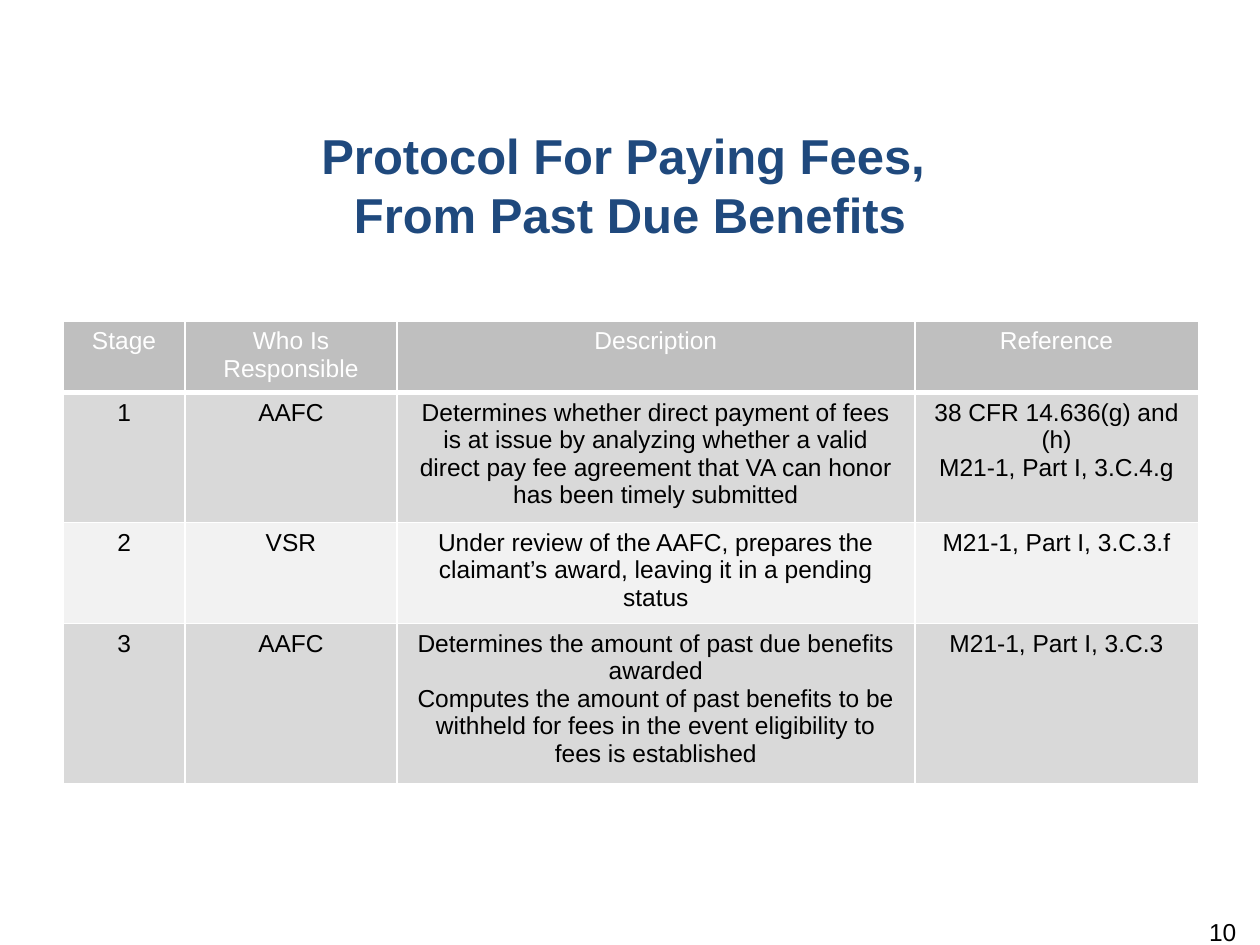
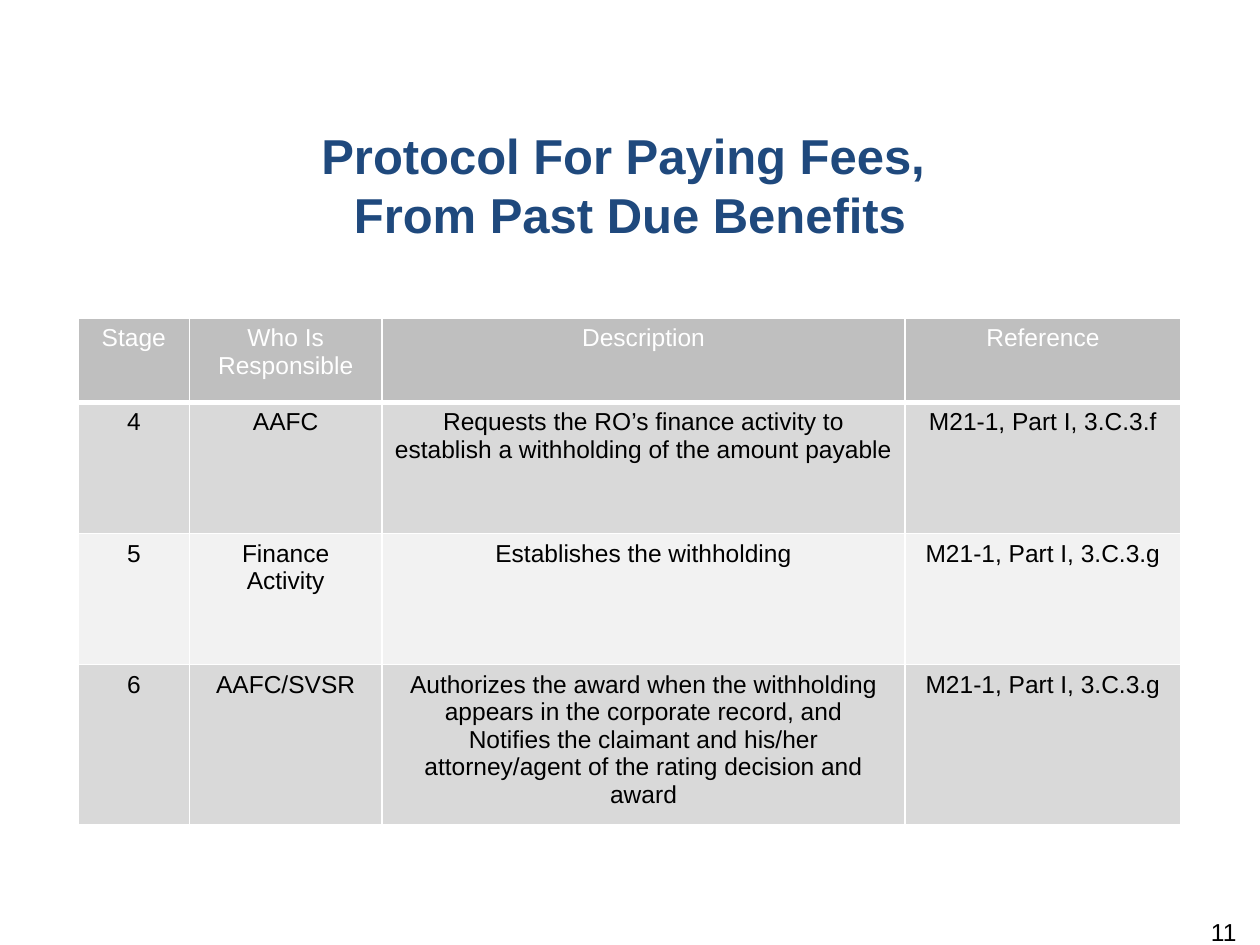
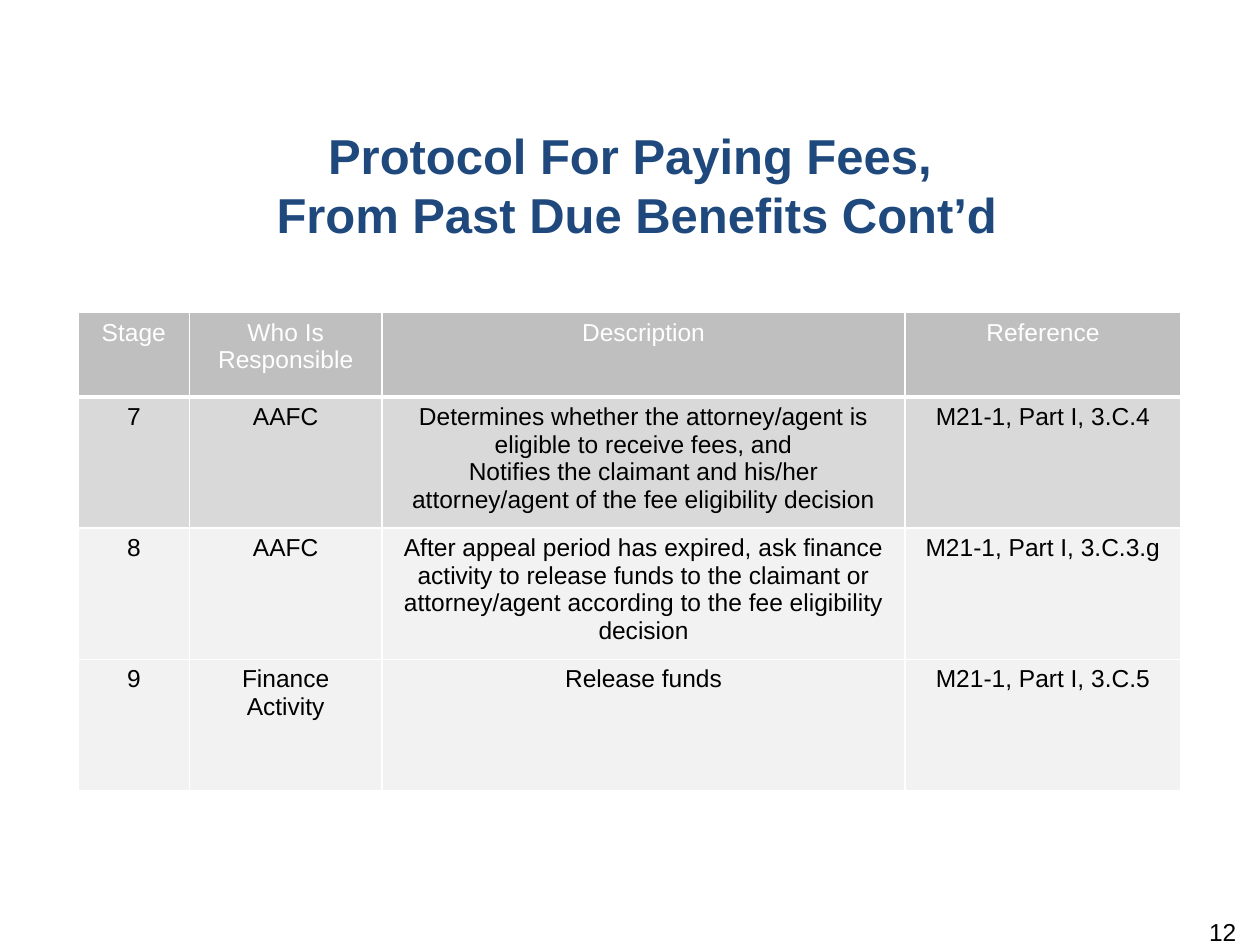
from lxml import etree
from pptx import Presentation
from pptx.dml.color import RGBColor
from pptx.enum.text import MSO_ANCHOR, PP_ALIGN
from pptx.oxml.ns import qn
from pptx.util import Pt

CENTER, RIGHT = PP_ALIGN.CENTER, PP_ALIGN.RIGHT
MIDDLE = MSO_ANCHOR.MIDDLE

FONT = "Arial"
NAVY, BLACK, WHITE = "1F497D", "000000", "FFFFFF"
HEADER_GRAY, DARK_GRAY, LIGHT_GRAY = "BFBFBF", "D9D9D9", "F2F2F2"
TITLE_SIZE, BODY_SIZE = 28, 14
THIN, THICK = 1, 3

TITLE_BOX = (0, 62.6, 720, 85.7)
NUMBER_BOX = (545.8, 519.8, 167.8, 28.8)
TITLE = ["Protocol For Paying Fees, ", "From Past Due Benefits"]
TITLE_CONTINUED = ["Protocol For Paying Fees,", " From Past Due Benefits Cont’d"]
HEADERS = ["Stage", "Who Is Responsible", "Description", "Reference"]

# Each cell is a string; a line feed starts a new paragraph.
WIDE = {"left": 36, "widths": [69.8, 121, 296, 162],
        "heights": [38.9] * 4, "side_margin": 7.9}
NARROW = {"left": 44.8, "widths": [63.4, 110.2, 298.8, 157.7],
          "heights": [48.2, 75, 75, 75], "side_margin": 7.2}

SLIDES = [
    {"number": "10", "title": TITLE, "layout": WIDE, "top": 183.4,
     "fills": [DARK_GRAY, LIGHT_GRAY, DARK_GRAY],
     "rows": [
         ["1", "AAFC",
          "Determines whether direct payment of fees is at issue by analyzing whether "
          "a valid direct pay fee agreement that VA can honor has been timely submitted",
          "38 CFR 14.636(g) and (h)\nM21-1, Part I, 3.C.4.g"],
         ["2", "VSR",
          "Under review of the AAFC, prepares the claimant’s award, "
          "leaving it in a pending status",
          "M21-1, Part I, 3.C.3.f"],
         ["3", "AAFC",
          "Determines the amount of past due benefits awarded\n"
          "Computes the amount of past benefits to be withheld for fees "
          "in the event eligibility to fees is established",
          "M21-1, Part I, 3.C.3"]]},
    {"number": "11", "title": TITLE, "layout": NARROW, "top": 181.7,
     "fills": [DARK_GRAY, LIGHT_GRAY, DARK_GRAY],
     "rows": [
         ["4", "AAFC",
          "Requests the RO’s finance activity to establish a withholding "
          "of the amount payable",
          "M21-1, Part I, 3.C.3.f"],
         ["5", "Finance Activity", "Establishes the withholding",
          "M21-1, Part I, 3.C.3.g"],
         ["6", "AAFC/SVSR",
          "Authorizes the award when the withholding appears in the corporate record, and\n"
          "Notifies the claimant and his/her attorney/agent of the rating decision and award",
          "M21-1, Part I, 3.C.3.g"]]},
    {"number": "12", "title": TITLE_CONTINUED, "layout": NARROW, "top": 178.6,
     "fills": [DARK_GRAY, LIGHT_GRAY, LIGHT_GRAY],
     "rows": [
         ["7", "AAFC",
          "Determines whether the attorney/agent is eligible to receive fees, and\n"
          "Notifies the claimant and his/her attorney/agent of the fee eligibility decision",
          "M21-1, Part I, 3.C.4"],
         ["8", "AAFC",
          "After appeal period has expired, ask finance activity to release funds to the "
          "claimant or attorney/agent according to the fee eligibility decision",
          "M21-1, Part I, 3.C.3.g"],
         ["9", "Finance Activity", "Release funds", "M21-1, Part I, 3.C.5"]]},
]


def rgb(hex_color):
    return RGBColor.from_string(hex_color)


def add_run(p, text, size, color, bold=False):
    r = p.add_run()
    r.text = text
    r.font.name, r.font.size, r.font.bold = FONT, Pt(size), bold
    r.font.color.rgb = rgb(color)


def add_text(s, box, lines, size, color, align, bold=False, margin_top=3.6):
    """Add a one-paragraph text box whose lines are split by line breaks."""
    tf = s.shapes.add_textbox(*map(Pt, box)).text_frame
    tf.word_wrap = True
    tf.vertical_anchor = MIDDLE
    tf.margin_top = Pt(margin_top)
    p = tf.paragraphs[0]
    p.alignment = align
    p.space_after = Pt(6)
    for i, line in enumerate(lines):
        if i:
            p.add_line_break()
        add_run(p, line, size, color, bold)


def set_borders(cell, bottom):
    tc_pr = cell._tc.get_or_add_tcPr()
    for side, width in zip("LRTB", (THIN, THIN, THIN, bottom)):
        ln = etree.SubElement(tc_pr, qn(f"a:ln{side}"), w=str(Pt(width)))
        fill = etree.SubElement(ln, qn("a:solidFill"))
        etree.SubElement(fill, qn("a:srgbClr"), val=WHITE)


def fill_cell(cell, text, fill, color, side_margin, bottom):
    set_borders(cell, bottom)
    cell.fill.solid()
    cell.fill.fore_color.rgb = rgb(fill)
    cell.margin_left = cell.margin_right = Pt(side_margin)
    tf = cell.text_frame
    for i, line in enumerate(text.split("\n")):
        p = tf.add_paragraph() if i else tf.paragraphs[0]
        p.alignment = CENTER
        add_run(p, line, BODY_SIZE, color)


def add_stage_table(s, layout, top, rows, fills):
    widths, heights = layout["widths"], layout["heights"]
    table = s.shapes.add_table(len(heights), len(widths), Pt(layout["left"]), Pt(top),
                               Pt(sum(widths)), Pt(sum(heights))).table
    table.first_row = table.horz_banding = False
    for column, width in zip(table.columns, widths):
        column.width = Pt(width)
    for row, height in zip(table.rows, heights):
        row.height = Pt(height)
    for i, (texts, fill) in enumerate(zip([HEADERS] + rows, [HEADER_GRAY] + fills)):
        color, bottom = (BLACK, THIN) if i else (WHITE, THICK)
        for cell, text in zip(table.rows[i].cells, texts):
            fill_cell(cell, text, fill, color, layout["side_margin"], bottom)


def main():
    prs = Presentation()
    prs.slide_width, prs.slide_height = Pt(720), Pt(540)
    for page in SLIDES:
        s = prs.slides.add_slide(prs.slide_layouts[6])
        add_text(s, TITLE_BOX, page["title"], TITLE_SIZE, NAVY, CENTER, bold=True)
        add_text(s, NUMBER_BOX, [page["number"]], BODY_SIZE, BLACK, RIGHT, margin_top=0)
        add_stage_table(s, page["layout"], page["top"], page["rows"], page["fills"])
    prs.save("out.pptx")


if __name__ == "__main__":
    main()
